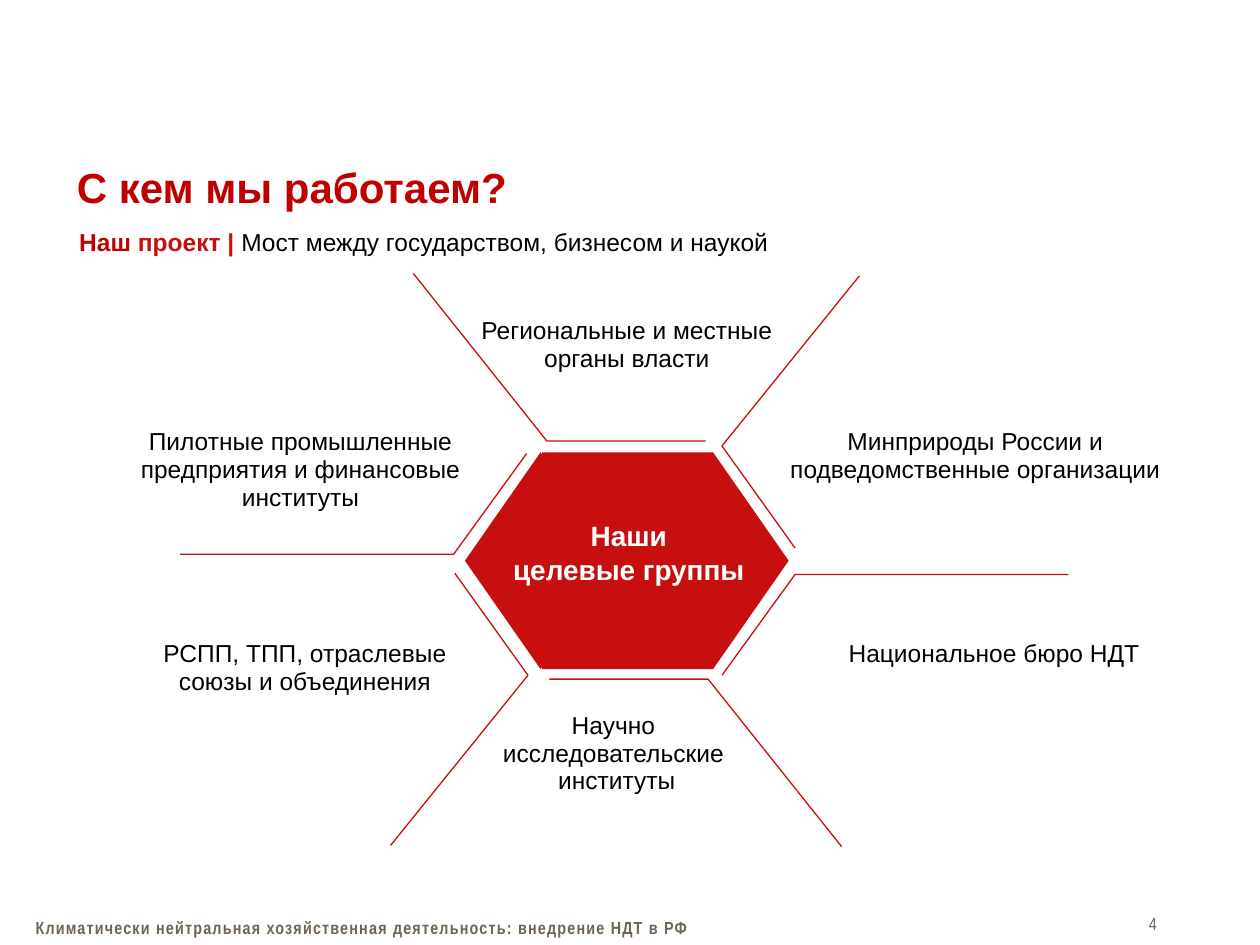
from lxml import etree
from pptx import Presentation
from pptx.dml.color import RGBColor
from pptx.enum import shapes, text
from pptx.util import Inches, Pt

THEME = {
    "red": "C80F0F", "title": "C00000", "ink": "000000", "white": "FFFFFF", "footer": "6E6452",
    "font": "Arial", "narrow": "Arial Narrow",
    "title_size": 24, "core_size": 16, "body_size": 14, "small_size": 10, "line": 0.75,
}
ALIGN = text.PP_ALIGN
ANCHOR = text.MSO_ANCHOR

TITLE = "С кем мы работаем?"
SUBTITLE = [("Наш ", "title", True), ("проект | ", "red", True),
            ("Мост между государством, бизнесом и наукой", "ink", False)]
CORE = ["Наши", "целевые группы"]
FOOTER = "Климатически нейтральная хозяйственная деятельность: внедрение НДТ в РФ"
PAGE = "4"

# box (left, top, width, height), paragraphs
GROUPS = [
    ((0.97, 5.03, 2.9, 0.55), ["РСПП, ТПП, отраслевые союзы и объединения"]),
    ((6.44, 5.03, 2.9, 0.34), ["Национальное бюро НДТ"]),
    ((3.47, 2.47, 3.01, 0.55), ["Региональные и местные органы власти"]),
    ((3.3, 5.6, 3.19, 0.77), ["Научно ", "исследовательские ", "институты"]),
    ((0.99, 3.35, 2.79, 0.77), ["Пилотные промышленные предприятия и финансовые институты"]),
    ((6.12, 3.35, 3.24, 0.55), ["Минприроды России и подведомственные организации"]),
]

# bent divider, and the centre around which its half-turn twin lies
DIVIDERS = [
    ([(3.28, 2.17), (4.34, 3.5), (5.6, 3.5)], (4.98, 4.445)),
    ([(1.43, 4.4), (3.6, 4.4), (4.18, 3.6)], (4.955, 4.48)),
    ([(6.82, 2.19), (5.73, 3.54), (6.31, 4.35)], (4.96, 4.45)),
]

HEX_TOP, HEX_HEIGHT = 3.59, 1.72
HEX_PARTS = [
    (shapes.MSO_SHAPE.FLOWCHART_DECISION, 5.06, 1.2),
    (shapes.MSO_SHAPE.FLOWCHART_DECISION, 3.69, 1.2),
    (shapes.MSO_SHAPE.RECTANGLE, 4.3, 1.36),
]


def color(name):
    return RGBColor.from_string(THEME[name])


def add_run(p, words, size, ink, bold=False, font="font"):
    r = p.add_run()
    r.text = words
    r.font.name = THEME[font]
    r.font.size = Pt(THEME[size])
    r.font.bold = bold
    r.font.color.rgb = color(ink)
    return r


def add_box(slide, box):
    tf = slide.shapes.add_textbox(*map(Inches, box)).text_frame
    tf.word_wrap = True
    return tf


def add_lines(tf, lines, size, ink, bold=False, spacing=None):
    for i, words in enumerate(lines):
        p = tf.paragraphs[0] if i == 0 else tf.add_paragraph()
        p.alignment = ALIGN.CENTER
        if spacing:
            p.line_spacing = spacing
        add_run(p, words, size, ink, bold)


def add_polyline(slide, points):
    points = [(Inches(x), Inches(y)) for x, y in points]
    builder = slide.shapes.build_freeform(*points[0])
    builder.add_line_segments(points[1:], close=False)
    s = builder.convert_to_shape()
    s.shadow.inherit = False
    s.fill.background()
    s.line.color.rgb = color("red")
    s.line.width = Pt(THEME["line"])


def add_header(slide):
    title = slide.shapes.title
    title.left, title.top, title.width, title.height = map(Inches, (0.51, 1.22, 8.5, 0.47))
    tf = title.text_frame
    tf.vertical_anchor = ANCHOR.BOTTOM
    tf.margin_bottom = Inches(0.01)
    p = tf.paragraphs[0]
    p.alignment = ALIGN.LEFT
    add_run(p, TITLE, "title_size", "title", True)

    p = add_box(slide, (0.53, 1.75, 9.38, 0.34)).paragraphs[0]
    for words, ink, bold in SUBTITLE:
        add_run(p, words, "body_size", ink, bold)


def add_hexagon(slide):
    for kind, left, width in HEX_PARTS:
        s = slide.shapes.add_shape(kind, *map(Inches, (left, HEX_TOP, width, HEX_HEIGHT)))
        s.shadow.inherit = False
        s.fill.solid()
        s.fill.fore_color.rgb = color("red")
        s.line.fill.background()
    tf = add_box(slide, (3.95, 4.07, 2.08, 0.64))
    tf.margin_left = tf.margin_right = 0
    add_lines(tf, CORE, "core_size", "white", True)


def add_footer(slide):
    p = add_box(slide, (0.01, 7.23, 5.72, 0.27)).paragraphs[0]
    p.alignment = ALIGN.CENTER
    r = add_run(p, FOOTER, "small_size", "footer", True, "narrow")
    r.font._element.set("spc", "70")
    p = add_box(slide, (8.42, 7.2, 0.86, 0.27)).paragraphs[0]
    p.alignment = ALIGN.RIGHT
    add_run(p, PAGE, "small_size", "footer", font="narrow")


def main():
    prs = Presentation()
    prs.slide_width, prs.slide_height = Inches(10), Inches(7.5)
    slide = prs.slides.add_slide(prs.slide_layouts[5])
    add_header(slide)
    for points, (cx, cy) in DIVIDERS:
        add_polyline(slide, points)
        add_polyline(slide, [(2 * cx - x, 2 * cy - y) for x, y in points])
    for box, lines in GROUPS:
        add_lines(add_box(slide, box), lines, "body_size", "ink", spacing=0.95)
    add_hexagon(slide)
    add_footer(slide)
    prs.save("out.pptx")


if __name__ == "__main__":
    main()
